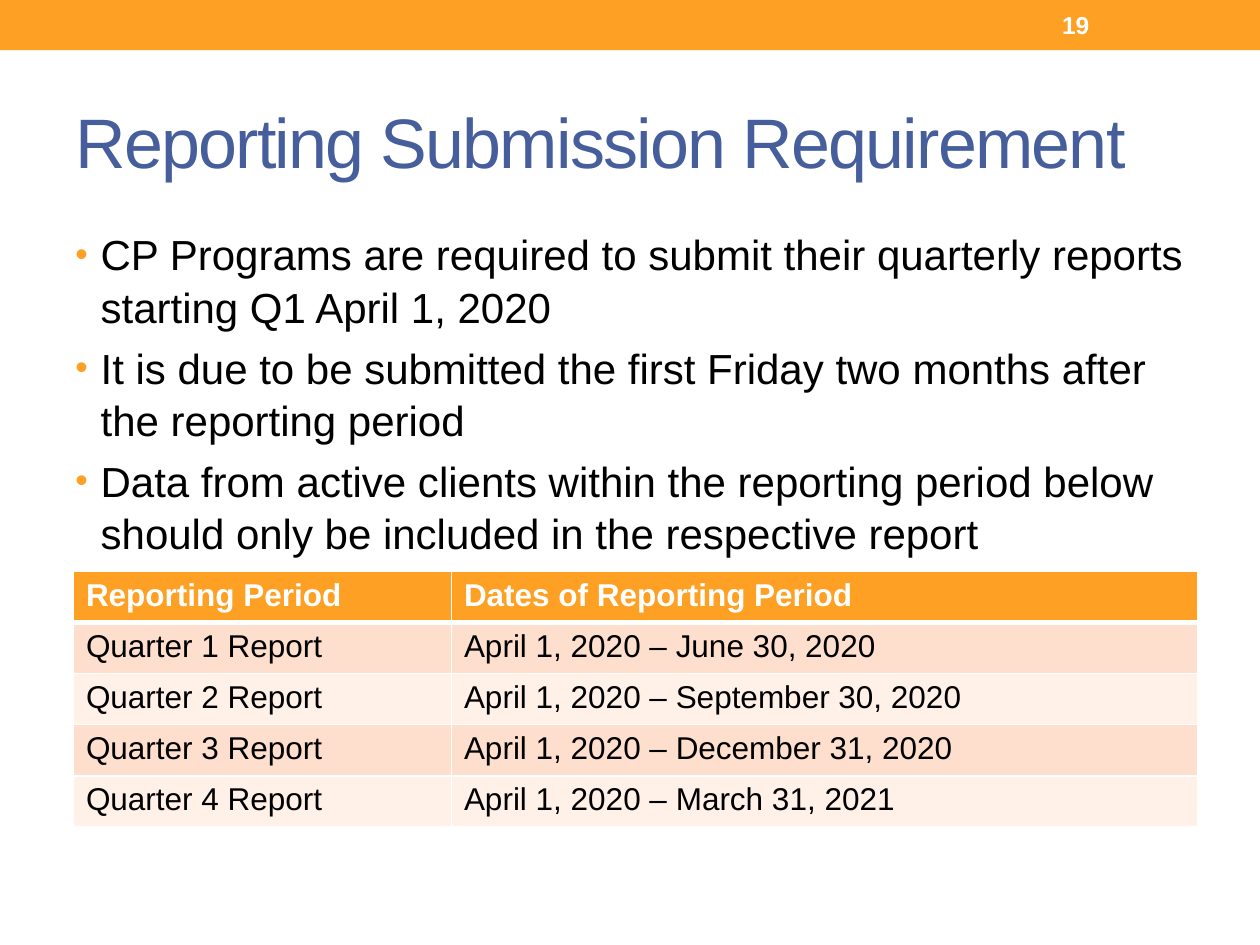
from lxml import etree
from pptx import Presentation
from pptx import util as u
from pptx.dml import color
from pptx.enum import shapes, text
from pptx.oxml import ns

ORANGE, WHITE, BLACK = "FDA023", "FFFFFF", "000000"


def rgb(value):
    return color.RGBColor.from_string(value)


def format_text(frame, size, tone, bold=False):
    for paragraph in frame.paragraphs:
        for run in paragraph.runs:
            run.font.name = "Arial"
            run.font.size = u.Pt(size)
            run.font.bold = bold
            run.font.color.rgb = rgb(tone)


presentation = Presentation()
presentation.slide_width = u.Cm(25.4)
presentation.slide_height = u.Cm(19.05)
slide = presentation.slides.add_slide(presentation.slide_layouts[6])

banner = slide.shapes.add_shape(
    shapes.MSO_SHAPE.RECTANGLE, 0, 0, presentation.slide_width, u.Cm(1.01))
banner.shadow.inherit = False
banner.fill.solid()
banner.fill.fore_color.rgb = rgb(ORANGE)
banner.line.fill.background()

bullets = "\n".join([
    "CP Programs are required to submit their quarterly reports starting Q1 April 1, 2020",
    "It is due to be submitted the first Friday two months after the reporting period",
    "Data from active clients within the reporting period below should only be included "
    "in the respective report",
])
middle, top = text.MSO_ANCHOR.MIDDLE, text.MSO_ANCHOR.TOP
frames = []
for content, left, y, width, height, anchor, size, tone, bold in [
    ("Reporting Submission Requirement", 1.27, 1.47, 22.86, 2.74, middle, 40, "465E9C", False),
    (bullets, 1.27, 4.45, 22.86, 6.78, top, 24, BLACK, False),
    ("19", 21.16, 0.05, 2.97, 0.91, middle, 14, WHITE, True),
]:
    box = slide.shapes.add_textbox(u.Cm(left), u.Cm(y), u.Cm(width), u.Cm(height))
    frame = box.text_frame
    frame.word_wrap = True
    frame.vertical_anchor = anchor
    frame.text = content
    format_text(frame, size, tone, bold)
    frames.append(frame)

title, body, number = frames
title.paragraphs[0].runs[0].font._element.set("spc", "-100")

for paragraph in body.paragraphs:
    paragraph.space_before = u.Pt(4.8)
    paragraph.line_spacing = 1.04
    properties = paragraph._p.get_or_add_pPr()
    properties.set("marL", str(u.Cm(0.51)))
    properties.set("indent", str(u.Cm(-0.51)))
    bullet_color = etree.SubElement(properties, ns.qn("a:buClr"))
    etree.SubElement(bullet_color, ns.qn("a:srgbClr"), val=ORANGE)
    etree.SubElement(properties, ns.qn("a:buSzPct"), val="85000")
    etree.SubElement(properties, ns.qn("a:buFont"), typeface="Arial")
    etree.SubElement(properties, ns.qn("a:buChar"), char="•")

rows = [
    ("Reporting Period", "Dates of Reporting Period"),
    ("Quarter 1 Report", "April 1, 2020 – June 30, 2020"),
    ("Quarter 2 Report", "April 1, 2020 – September 30, 2020"),
    ("Quarter 3 Report", "April 1, 2020 – December 31, 2020"),
    ("Quarter 4 Report", "April 1, 2020 – March 31, 2021"),
]
row_height = u.Cm(1.03)
table = slide.shapes.add_table(
    len(rows), 2, u.Cm(1.48), u.Cm(11.52), u.Cm(22.66), row_height * len(rows)).table
for column, width in zip(table.columns, (7.62, 15.04)):
    column.width = u.Cm(width)

for row_index, values in enumerate(rows):
    table.rows[row_index].height = row_height
    header = row_index == 0
    fill = ORANGE if header else ("FFF0E8", "FEDFCD")[row_index % 2]
    for column_index, value in enumerate(values):
        cell = table.cell(row_index, column_index)
        cell.text_frame.text = value
        format_text(cell.text_frame, 18, WHITE if header else BLACK, header)
        cell_properties = cell._tc.get_or_add_tcPr()
        for side in ("lnL", "lnR", "lnT", "lnB"):
            thick = (row_index, side) in ((0, "lnB"), (1, "lnT"))
            border = etree.SubElement(
                cell_properties, ns.qn("a:" + side), w=str(u.Pt(3 if thick else 1)))
            border_fill = etree.SubElement(border, ns.qn("a:solidFill"))
            etree.SubElement(border_fill, ns.qn("a:srgbClr"), val=WHITE)
        cell.fill.solid()
        cell.fill.fore_color.rgb = rgb(fill)

presentation.save("out.pptx")
